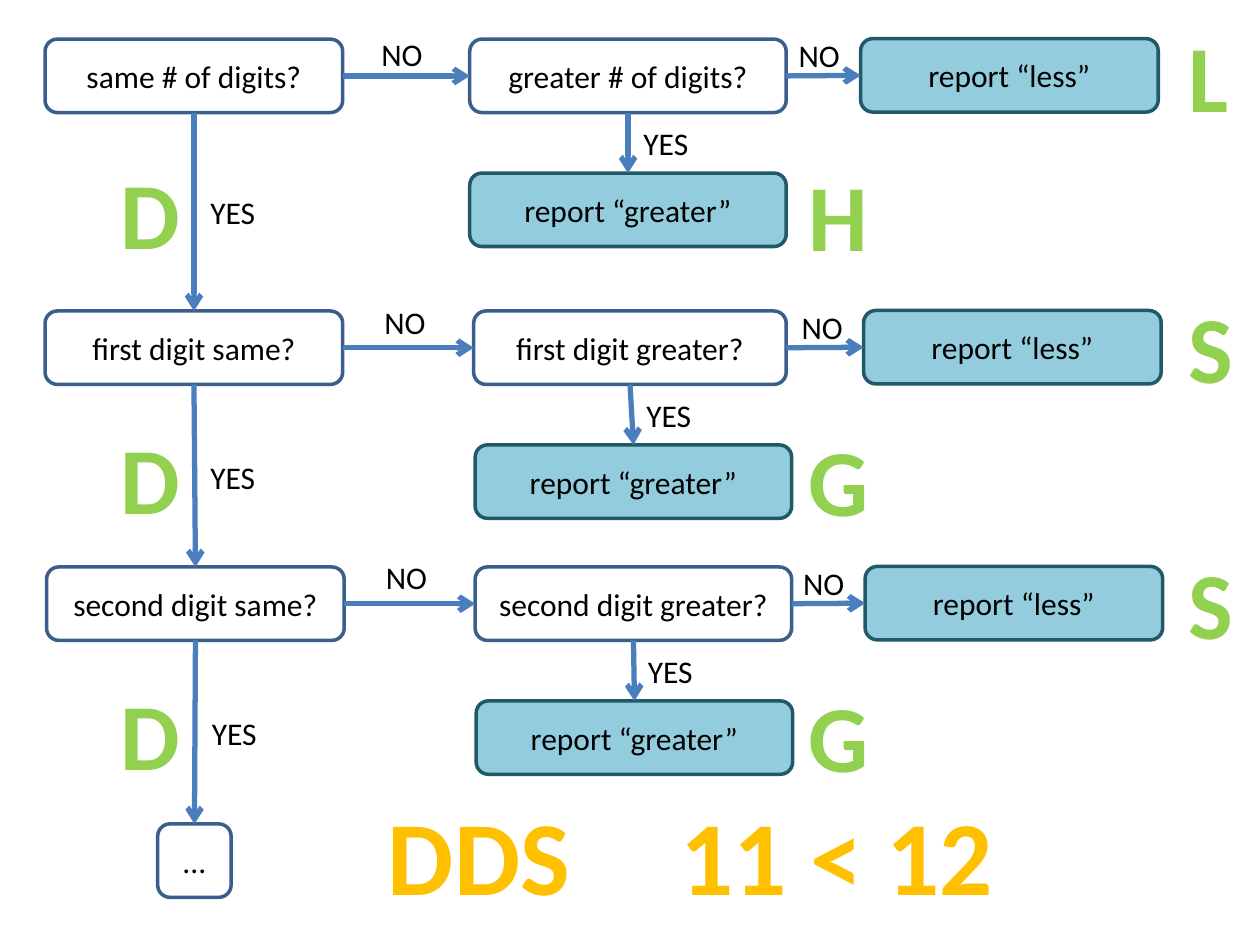
from dataclasses import dataclass

from lxml.etree import SubElement
from pptx import Presentation
from pptx.dml.color import RGBColor
from pptx.enum.shapes import MSO_CONNECTOR as Connector, MSO_SHAPE as Shape
from pptx.enum.text import MSO_ANCHOR as Anchor, MSO_AUTO_SIZE as AutoSize, PP_ALIGN as Align
from pptx.oxml.ns import qn
from pptx.util import Cm, Pt

BLACK = RGBColor(0x00, 0x00, 0x00)
QUESTION_EDGE = RGBColor(0x3A, 0x5F, 0x8C)
REPORT_FILL = RGBColor(0x93, 0xCD, 0xDD)
REPORT_EDGE = RGBColor(0x21, 0x59, 0x68)
ARROW = RGBColor(0x4B, 0x7E, 0xBC)
GREEN = RGBColor(0x92, 0xD0, 0x50)
GOLD = RGBColor(0xFF, 0xC0, 0x00)

FONT = "Calibri"
TOP, LEFT, BOTTOM, RIGHT = range(4)
NODE_HEIGHT = 1.48
SIDE_WIDTH = 6
MIDDLE_WIDTH = 6.38


@dataclass
class Stage:
    """One comparison step; lengths are in centimetres."""
    same: str
    greater: str
    top: float
    same_left: float
    greater_left: float
    greater_width: float
    report_left: float
    shift: float
    no_rise: float
    yes_drop: float
    greater_code: str
    less_code: str


STAGES = [
    Stage("same # of digits?", "greater # of digits?", 0.79, 0.91, 9.47, MIDDLE_WIDTH,
          9.47, 0, 0.2, 2.97, "H", "L"),
    Stage("first digit same?", "first digit greater?", 6.27, 0.91, 9.55, 6.3,
          9.58, 0.06, 0.28, 2.83, "G", "S"),
    Stage("second digit same?", "second digit greater?", 11.43, 0.94, 9.58, MIDDLE_WIDTH,
          9.6, 0.09, 0.3, 2.84, "G", "S"),
]


def write(frame, text, size=18, color=BLACK, bold=False):
    """Add one formatted run to the first paragraph and return that paragraph."""
    paragraph = frame.paragraphs[0]
    run = paragraph.add_run()
    run.text = text
    run.font.name = FONT
    run.font.size = Pt(size)
    run.font.bold = bold
    run.font.color.rgb = color
    return paragraph


def add_node(slide, text, left, top, width, report=False):
    """Add a rounded question or report box."""
    node = slide.shapes.add_shape(Shape.FLOWCHART_ALTERNATE_PROCESS, Cm(left), Cm(top),
                                  Cm(width), Cm(NODE_HEIGHT))
    node.shadow.inherit = False
    if report:
        node.fill.solid()
        node.fill.fore_color.rgb = REPORT_FILL
    else:
        node.fill.background()
    node.line.color.rgb = REPORT_EDGE if report else QUESTION_EDGE
    node.line.width = Pt(2)
    node.text_frame.vertical_anchor = Anchor.MIDDLE
    write(node.text_frame, text).alignment = Align.CENTER
    return node


def add_arrow(slide, source, source_side, target, target_side):
    """Join two boxes with an arrow glued to their sides."""
    arrow = slide.shapes.add_connector(Connector.STRAIGHT, 0, 0, 0, 0)
    arrow.begin_connect(source, source_side)
    arrow.end_connect(target, target_side)
    arrow.line.color.rgb = ARROW
    arrow.line.width = Pt(3)
    SubElement(arrow.line._get_or_add_ln(), qn("a:tailEnd"), type="arrow")
    SubElement(arrow._element.spPr, qn("a:effectLst"))


def add_label(slide, text, left, top, width=1.47, height=1.02, wrap=True, **style):
    """Add a free-standing text label."""
    label = slide.shapes.add_textbox(Cm(left), Cm(top), Cm(width), Cm(height))
    label.text_frame.word_wrap = wrap
    label.text_frame.auto_size = AutoSize.SHAPE_TO_FIT_TEXT
    write(label.text_frame, text, **style)


def add_code(slide, letter, left, top, width=1.73, wrap=True):
    """Add a large green code letter."""
    add_label(slide, letter, left, top, width, 2.57, wrap, size=54, color=GREEN, bold=True)


def add_stage(slide, stage):
    """Add the boxes, arrows and labels of one stage and return its first question."""
    top, shift = stage.top, stage.shift
    same = add_node(slide, stage.same, stage.same_left, top, SIDE_WIDTH)
    greater = add_node(slide, stage.greater, stage.greater_left, top, stage.greater_width)
    less_report = add_node(slide, "report “less”", 17.35 + shift, top - 0.01, SIDE_WIDTH, True)
    greater_report = add_node(slide, "report “greater”", stage.report_left, top + 2.7,
                              MIDDLE_WIDTH, True)

    add_arrow(slide, same, RIGHT, greater, LEFT)
    add_arrow(slide, greater, RIGHT, less_report, LEFT)
    add_arrow(slide, greater, BOTTOM, greater_report, TOP)

    add_label(slide, "NO", 7.44 + shift, top - stage.no_rise)
    add_label(slide, "NO", 15.85 + shift, top - 0.19)
    add_label(slide, "YES", 12.72 + shift, top + 1.58)
    add_label(slide, "YES", stage.same_left + 3.08, top + stage.yes_drop)

    code_top = top + stage.yes_drop - 0.76
    add_code(slide, "D", 2.18, code_top, wrap=False)
    add_code(slide, stage.greater_code, 16.05, code_top + 0.04)
    add_code(slide, stage.less_code, 23.7, top - 0.56, 1.27)
    return same


def main():
    """Build the number comparison flowchart."""
    deck = Presentation()
    deck.slide_width, deck.slide_height = Cm(25.4), Cm(19.05)
    slide = deck.slides.add_slide(deck.slide_layouts[6])

    steps = [add_stage(slide, stage) for stage in STAGES]
    steps.append(add_node(slide, "...", 3.18, 16.61, NODE_HEIGHT))
    for step, next_step in zip(steps, steps[1:]):
        add_arrow(slide, step, BOTTOM, next_step, TOP)

    for text, left, width in (("DDS", 7.57, 4.22), ("11 < 12", 13.46, 6.88)):
        add_label(slide, text, left, 15.82, width, 2.82, False, size=60, color=GOLD, bold=True)

    deck.save("out.pptx")


if __name__ == "__main__":
    main()
